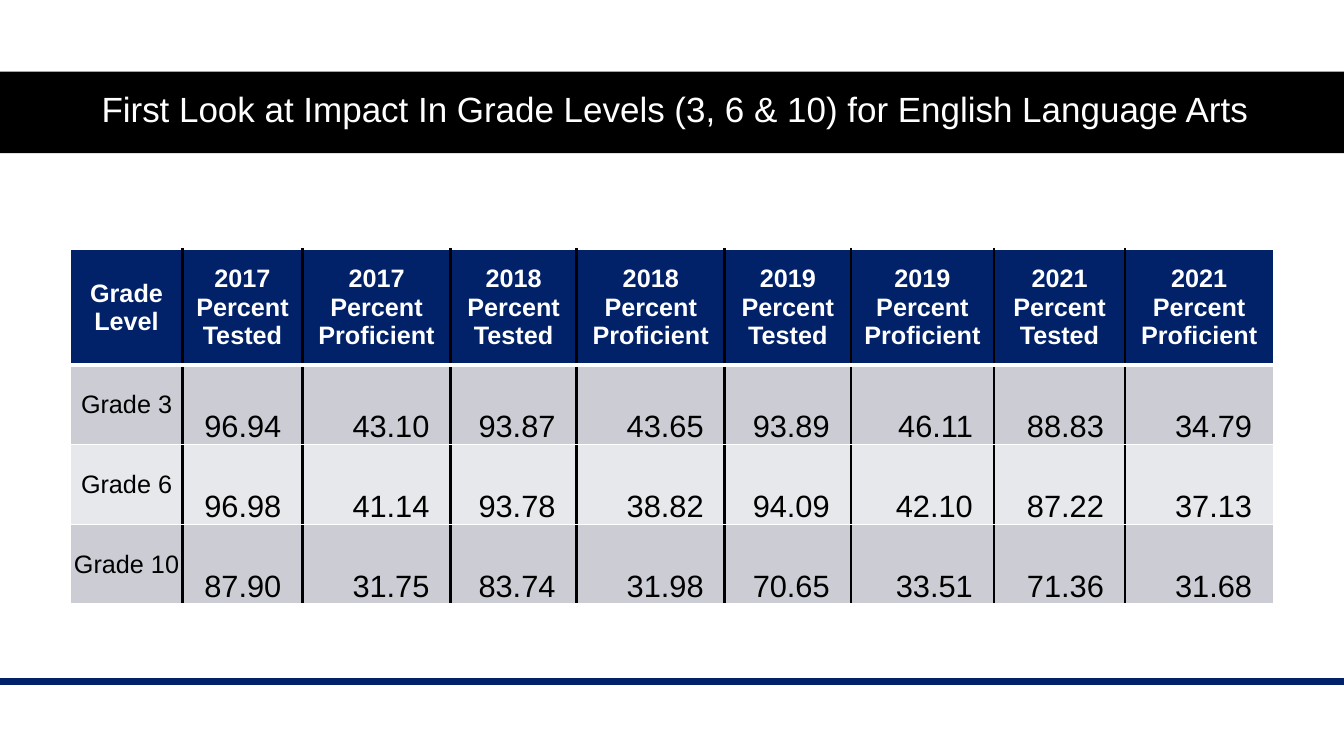
from lxml.etree import SubElement
from pptx import Presentation
from pptx.dml.color import RGBColor
from pptx.enum.shapes import MSO_CONNECTOR, MSO_SHAPE
from pptx.enum.text import MSO_ANCHOR, MSO_AUTO_SIZE, PP_ALIGN
from pptx.oxml.ns import qn
from pptx.util import Inches, Pt

NAVY = RGBColor(0x01, 0x21, 0x69)
BLACK = RGBColor(0, 0, 0)
WHITE = RGBColor(0xFF, 0xFF, 0xFF)
DARK = RGBColor(0xCC, 0xCD, 0xD4)
LIGHT = RGBColor(0xE7, 0xE8, 0xEB)

YEARS = (2017, 2018, 2019, 2021)
HEADS = ["Grade Level"] + [
    f"{year} Percent {kind}" for year in YEARS for kind in ("Tested", "Proficient")
]
GRADES = {
    "Grade 3": (96.94, 43.10, 93.87, 43.65, 93.89, 46.11, 88.83, 34.79),
    "Grade 6": (96.98, 41.14, 93.78, 38.82, 94.09, 42.10, 87.22, 37.13),
    "Grade 10": (87.90, 31.75, 83.74, 31.98, 70.65, 33.51, 71.36, 31.68),
}
WIDTHS = (1.11, 1.19, 1.47, 1.25, 1.47, 1.25, 1.42, 1.3, 1.47)
HEIGHTS = (1.15, 0.79, 0.79, 0.79)


def write(frame, text, size=18, color=BLACK, bold=False,
          align=PP_ALIGN.CENTER, space=1.0):
    """Put one formatted paragraph in a text frame."""
    frame.text = text
    line = frame.paragraphs[0]
    line.alignment = align
    line.line_spacing = space
    font = line.runs[0].font
    font.name, font.size, font.bold = "Arial", Pt(size), bold
    font.color.rgb = color


def add_rule(slide, left, right, top):
    rule = slide.shapes.add_connector(
        MSO_CONNECTOR.STRAIGHT, Inches(left), Inches(top), Inches(right), Inches(top))
    rule.line.color.rgb = NAVY
    rule.line.width = Pt(4.5)
    SubElement(rule.element.spPr, qn("a:effectLst"))


def add_bar(slide, left, top, width, height):
    bar = slide.shapes.add_shape(
        MSO_SHAPE.RECTANGLE, Inches(left), Inches(top), Inches(width), Inches(height))
    bar.shadow.inherit = False
    bar.fill.solid()
    bar.fill.fore_color.rgb = BLACK
    bar.line.fill.background()


def set_title(slide, text):
    title = slide.shapes.title
    title.left, title.top = Inches(0.61), Inches(0.7)
    title.width, title.height = Inches(12.26), Inches(0.81)
    frame = title.text_frame
    frame.auto_size = MSO_AUTO_SIZE.NONE
    frame.vertical_anchor = MSO_ANCHOR.MIDDLE
    write(frame, text, size=25, color=WHITE, space=0.9)
    # Bring the title in front of the bar
    title.element.getparent().append(title.element)


def set_edge(cell, side, color, width):
    edge = SubElement(cell._tc.get_or_add_tcPr(), qn(f"a:ln{side}"), w=str(Pt(width)))
    fill = SubElement(edge, qn("a:solidFill"))
    SubElement(fill, qn("a:srgbClr"), val=str(color))


def style_cell(cell, row, col):
    # Borders come before the fill in the cell's XML
    inner = (BLACK, 2.25)
    outer = (WHITE, 1)
    under = (WHITE, 3)
    set_edge(cell, "L", *(inner if col else outer))
    set_edge(cell, "R", *(inner if col < len(WIDTHS) - 1 else outer))
    set_edge(cell, "T", *(under if row == 1 else outer))
    set_edge(cell, "B", *(under if row == 0 else outer))
    cell.fill.solid()
    cell.fill.fore_color.rgb = NAVY if row == 0 else DARK if row % 2 else LIGHT
    score = row > 0 and col > 0
    cell.margin_left = cell.margin_top = Inches(0.01)
    cell.margin_right = Inches(0.21 if score else 0.01)
    cell.margin_bottom = 0
    cell.vertical_anchor = MSO_ANCHOR.BOTTOM if score else MSO_ANCHOR.MIDDLE


def add_scores(slide, left, top):
    rows = [HEADS] + [
        [grade] + [f"{score:.2f}" for score in scores]
        for grade, scores in GRADES.items()
    ]
    table = slide.shapes.add_table(
        len(rows), len(HEADS), Inches(left), Inches(top),
        Inches(sum(WIDTHS)), Inches(sum(HEIGHTS))).table
    for part, width in zip(table.columns, WIDTHS):
        part.width = Inches(width)
    for part, height in zip(table.rows, HEIGHTS):
        part.height = Inches(height)
    for row, texts in enumerate(rows):
        for col, text in enumerate(texts):
            cell = table.cell(row, col)
            style_cell(cell, row, col)
            if row == 0:
                write(cell.text_frame, text, color=WHITE, bold=True)
            elif col == 0:
                write(cell.text_frame, text)
            else:
                write(cell.text_frame, text, size=22, align=PP_ALIGN.RIGHT)


def main():
    deck = Presentation()
    deck.slide_width, deck.slide_height = Inches(13.33), Inches(7.5)
    slide = deck.slides.add_slide(deck.slide_layouts[5])

    # Footer rule and title band
    add_rule(slide, -0.03, 13.37, 6.76)
    add_bar(slide, 0, 0.71, 13.33, 0.81)
    set_title(slide, "First Look at Impact In Grade Levels (3, 6 & 10) "
                     "for English Language Arts ")

    # Table of results
    add_scores(slide, 0.7, 2.47)
    deck.save("out.pptx")


if __name__ == "__main__":
    main()
